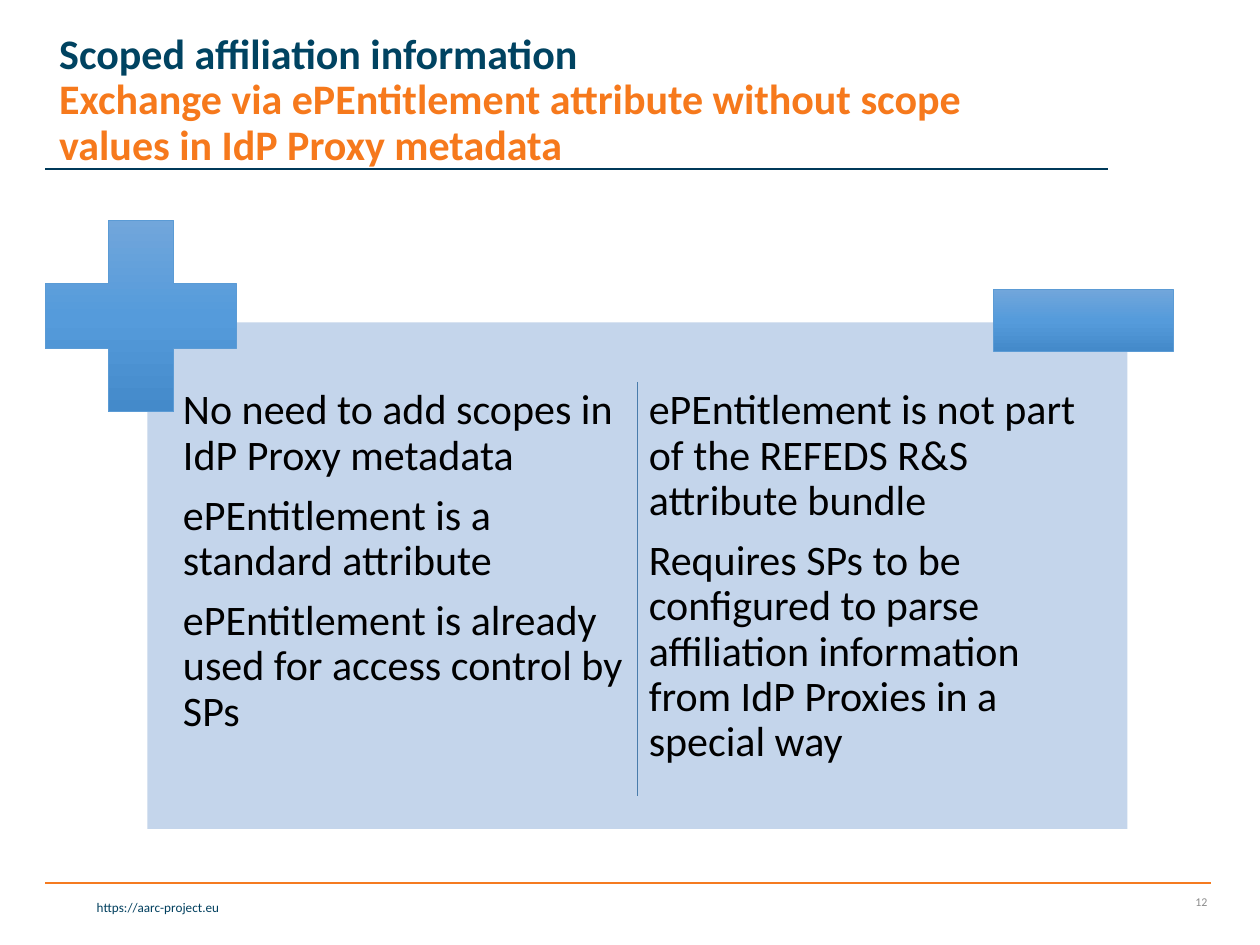
from copy import deepcopy
from typing import NamedTuple

from lxml import etree
from pptx import Presentation
from pptx.dml.color import RGBColor
from pptx.enum.shapes import MSO_CONNECTOR, MSO_SHAPE
from pptx.enum.text import MSO_ANCHOR, MSO_AUTO_SIZE, PP_ALIGN
from pptx.oxml.ns import qn
from pptx.util import Cm, Pt

RECT, PLUS = MSO_SHAPE.RECTANGLE, MSO_SHAPE.CROSS
STRAIGHT = MSO_CONNECTOR.STRAIGHT
TOP, MIDDLE = MSO_ANCHOR.TOP, MSO_ANCHOR.MIDDLE
LEFT, RIGHT = PP_ALIGN.LEFT, PP_ALIGN.RIGHT

FONT = "Calibri"
NAVY = RGBColor(0x00, 0x43, 0x61)
ORANGE = RGBColor(0xF6, 0x79, 0x1C)
FOOTER_ORANGE = RGBColor(0xF5, 0x7B, 0x20)
FOOTER_NAVY = RGBColor(0x00, 0x3F, 0x5E)
RULE_NAVY = RGBColor(0x00, 0x39, 0x59)
GREY = RGBColor(0x8C, 0x8C, 0x8C)
BLACK = RGBColor(0x00, 0x00, 0x00)
PANEL_BLUE = RGBColor(0xC4, 0xD5, 0xEB)
DIVIDER_BLUE = RGBColor(0x49, 0x7C, 0xAB)
SIGN_LINE = RGBColor(0x5B, 0x9B, 0xD5)
SIGN_STOPS = (
    (0, RGBColor(0x71, 0xA6, 0xDB)),
    (50, RGBColor(0x55, 0x9B, 0xDB)),
    (100, RGBColor(0x44, 0x8A, 0xCA)),
)


class Box(NamedTuple):
    """Left, top, width and height in centimetres."""
    x: float
    y: float
    w: float
    h: float

    def emu(self) -> tuple:
        return tuple(Cm(v) for v in self)


class Rule(NamedTuple):
    x1: float
    y1: float
    x2: float
    y2: float
    color: RGBColor
    width: float


class Sign(NamedTuple):
    shape: MSO_SHAPE
    box: Box


class TextBlock(NamedTuple):
    box: Box
    lines: tuple
    size: float
    color: RGBColor
    align: PP_ALIGN = LEFT
    anchor: MSO_ANCHOR = TOP
    inset: float = 0.25
    line_spacing: float = 1.0
    space_after: float = 0


def column(x: float, *lines: str) -> TextBlock:
    return TextBlock(Box(x, 7.7, 9.17, 8.74), lines, 24, BLACK, inset=0.13,
                     line_spacing=0.9, space_after=8.4)


RULES = (
    Rule(0.91, 17.8, 24.41, 17.8, FOOTER_ORANGE, 1),
    Rule(22.33, 3.4, 0.91, 3.4, RULE_NAVY, 1),
    Rule(12.85, 7.7, 12.85, 16.05, DIVIDER_BLUE, 0.5),
)
SIGNS = (
    Sign(PLUS, Box(0.91, 4.44, 3.86, 3.86)),
    Sign(RECT, Box(20.02, 5.84, 3.63, 1.24)),
)
TEXTS = (
    TextBlock(Box(0.89, 18, 3.78, 0.58), ("https://aarc-project.eu",),
              7.5, FOOTER_NAVY, RIGHT),
    TextBlock(Box(23.04, 17.8, 1.55, 0.76), ("12",), 6.8, GREY, RIGHT, MIDDLE),
    column(3.56,
           "No need to add scopes in IdP Proxy metadata",
           "ePEntitlement is a standard attribute",
           "ePEntitlement is already used for access control by SPs"),
    column(12.95,
           "ePEntitlement is not part of the REFEDS R&S attribute bundle",
           "Requires SPs to be configured to parse affiliation information "
           "from IdP Proxies in a special way"),
)


def add_title(s) -> None:
    sp = s.shapes.title
    sp.left, sp.top, sp.width, sp.height = Box(0.94, 0.2, 20.02, 3.68).emu()
    tf = sp.text_frame
    tf.word_wrap = True
    tf.auto_size = MSO_AUTO_SIZE.NONE
    tf.vertical_anchor = MIDDLE
    p = tf.paragraphs[0]
    p.alignment = LEFT
    p.line_spacing = 0.9
    p.font.name, p.font.size, p.font.bold = FONT, Pt(24), True
    r = p.add_run()
    r.text = "Scoped affiliation information"
    r.font.color.rgb = NAVY
    p.add_line_break()
    r = p.add_run()
    r.text = ("Exchange via ePEntitlement attribute without scope values "
              "in IdP Proxy metadata")
    r.font.color.rgb = ORANGE


def add_panel(s, box: Box) -> None:
    sp = s.shapes.add_shape(RECT, *box.emu())
    sp.shadow.inherit = False
    sp.fill.solid()
    sp.fill.fore_color.rgb = PANEL_BLUE
    sp.line.fill.background()


def add_sign(s, sign: Sign) -> None:
    sp = s.shapes.add_shape(sign.shape, *sign.box.emu())
    sp.shadow.inherit = False
    if sign.shape == PLUS:
        sp.adjustments[0] = 0.33
    sp.line.color.rgb = SIGN_LINE
    sp.line.width = Pt(0.5)
    sp.fill.gradient()
    sp.fill.gradient_angle = 270
    # The default gradient has two stops; a third is needed
    stop_list = sp._element.spPr.find(qn("a:gradFill")).find(qn("a:gsLst"))
    stop_list.append(deepcopy(stop_list[0]))
    for stop, (position, color) in zip(sp.fill.gradient_stops, SIGN_STOPS):
        stop.position = position / 100
        stop.color.rgb = color


def add_rule(s, rule: Rule) -> None:
    ends = (Cm(v) for v in rule[:4])
    line = s.shapes.add_connector(STRAIGHT, *ends)
    line.line.color.rgb = rule.color
    line.line.width = Pt(rule.width)
    etree.SubElement(line._element.spPr, qn("a:effectLst"))


def add_text(s, block: TextBlock) -> None:
    tf = s.shapes.add_textbox(*block.box.emu()).text_frame
    tf.word_wrap = True
    tf.vertical_anchor = block.anchor
    tf.margin_left = tf.margin_right = Cm(block.inset)
    tf.margin_top = tf.margin_bottom = Cm(0.13)
    for i, text in enumerate(block.lines):
        p = tf.add_paragraph() if i else tf.paragraphs[0]
        p.text = text
        p.alignment = block.align
        p.line_spacing = block.line_spacing
        p.space_after = Pt(block.space_after)
        p.font.name, p.font.size = FONT, Pt(block.size)
        p.font.color.rgb = block.color


def main() -> None:
    prs = Presentation()
    prs.slide_width, prs.slide_height = Cm(25.4), Cm(19.05)
    s = prs.slides.add_slide(prs.slide_layouts[5])

    # Heading, then the pros and cons panel
    add_title(s)
    add_panel(s, Box(2.97, 6.5, 19.76, 10.21))

    # Columns and footer, plus and minus signs, rules
    for block in TEXTS:
        add_text(s, block)
    for sign in SIGNS:
        add_sign(s, sign)
    for rule in RULES:
        add_rule(s, rule)

    prs.save("out.pptx")


if __name__ == "__main__":
    main()
